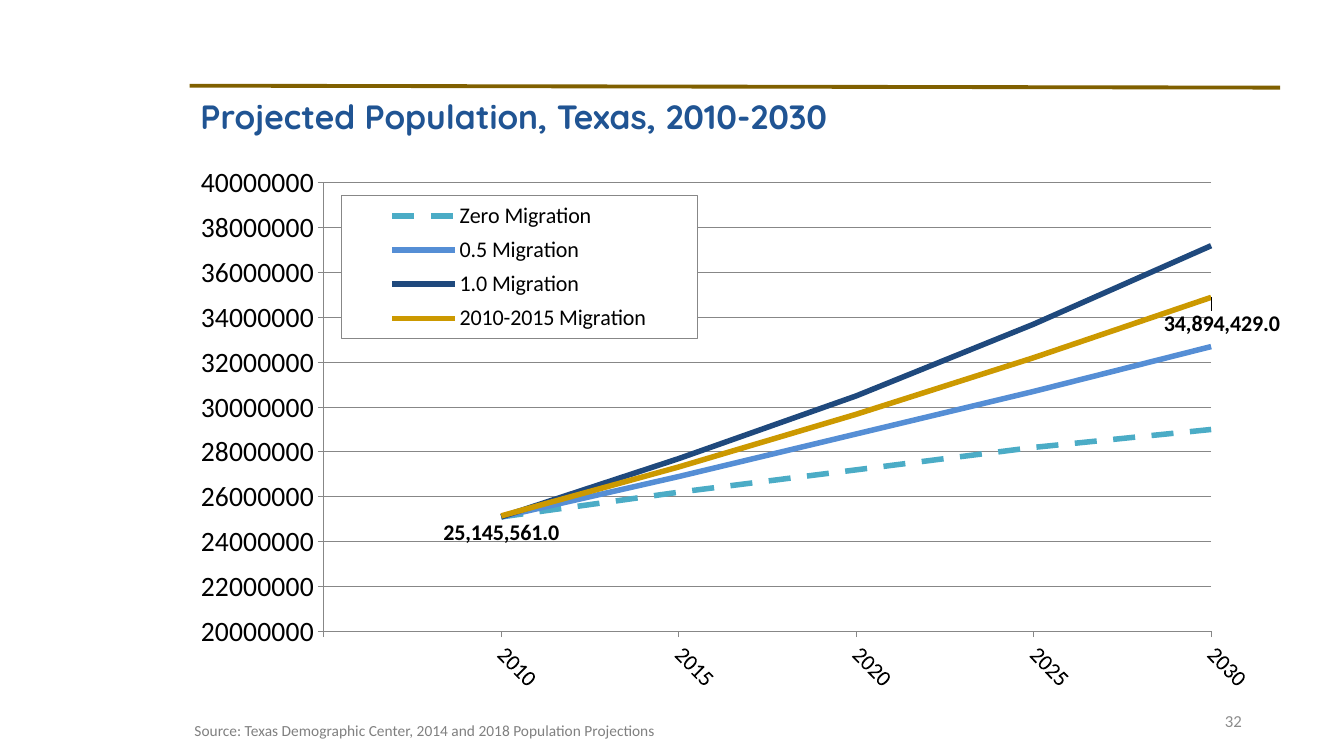
from lxml import etree
from pptx import Presentation
from pptx.chart.data import CategoryChartData
from pptx.dml.color import RGBColor
from pptx.enum import chart as ch, dml, shapes, text
from pptx.oxml import ns
from pptx.util import Pt

# Content
TITLE = "Projected Population, Texas, 2010-2030"
SOURCE = "Source: Texas Demographic Center, 2014 and 2018 Population Projections"
PAGE = "32"
YEARS = ["", "2010", "2015", "2020", "2025", "2030"]
SCENARIOS = [
    ("Zero Migration", "4BACC6", [None, 25100000, 26200000, 27200000, 28200000, 29000000]),
    ("0.5 Migration", "558ED5", [None, 25100000, 26900000, 28800000, 30700000, 32700000]),
    ("1.0 Migration", "1F497D", [None, 25100000, 27700000, 30500000, 33700000, 37200000]),
    ("2010-2015 Migration", "CC9900", [None, 25145561, 27326252, 29677772, 32204904, 34894429]),
]
DASHED = "Zero Migration"
LABELLED = "2010-2015 Migration"

# Theme and places (points; chart layouts are fractions of the chart)
THEME = dict(
    body="Calibri", heading="Quicksand", black="000000", white="FFFFFF",
    title="205493", rule="806000", page="8C8C8C", source="808080", axis="878787",
    title_size=24, chart_size=20, small_chart_size=16, page_size=12, source_size=11,
    line=4, rule_line=2.75, thin=0.75,
)
RULE = (135.4, 61.2, 914.4, 62.6)
TITLE_BOX = (136, 68.4, 779, 432)
PAGE_BOX = (678.2, 500.4, 216, 28.8)
SOURCE_BOX = (131.8, 511.2, 346.3, 20.9)
CHART_BOX = (131.8, 84.2, 783.4, 415.4)
PLOT_LAYOUT = (0.129, 0.112, 0.822, 0.771)
LEGEND_LAYOUT = (0.145, 0.134, 0.33, 0.246)
# Shift of each label from its place below the point, to keep clear of the lines
LABEL_SHIFTS = {1: (0, 0), 5: (0.01, 0.015)}


def rgb(name):
    return RGBColor.from_string(THEME.get(name, name))


def points(box):
    return [Pt(v) for v in box]


def set_font(font, size, color="black", face="body", bold=False):
    font.size, font.name, font.bold = Pt(THEME[size]), THEME[face], bold
    font.color.rgb = rgb(color)


def put_text(holder, words, size, color, face="body", bold=False,
             align=text.PP_ALIGN.LEFT, anchor=text.MSO_ANCHOR.TOP, wrap=True, spacing=1.0,
             fit=text.MSO_AUTO_SIZE.NONE):
    frame = holder.text_frame
    frame.word_wrap, frame.vertical_anchor, frame.auto_size = wrap, anchor, fit
    paragraph = frame.paragraphs[0]
    paragraph.alignment, paragraph.line_spacing = align, spacing
    paragraph.space_before = Pt(0)
    run = paragraph.add_run()
    run.text = words
    set_font(run.font, size, color, face, bold)


def make_layout(settings):
    layout = etree.Element(ns.qn("c:layout"))
    manual = etree.SubElement(layout, ns.qn("c:manualLayout"))
    for tag, value in settings:
        etree.SubElement(manual, ns.qn("c:" + tag)).set("val", str(value))
    return layout


def set_layout(parent, box, before, inner=False):
    for old in parent.findall(ns.qn("c:layout")):
        parent.remove(old)
    target = [("layoutTarget", "inner")] if inner else []
    edges = [("xMode", "edge"), ("yMode", "edge")]
    parent.find(ns.qn(before)).addprevious(make_layout([*target, *edges, *zip("xywh", box)]))


def style_line(line, color, width):
    line.color.rgb, line.width = rgb(color), Pt(THEME[width])


# Slide, rule and title
deck = Presentation()
deck.slide_width, deck.slide_height = Pt(960), Pt(540)
slide = deck.slides.add_slide(deck.slide_layouts[5])
title = slide.shapes.title
title.left, title.top, title.width, title.height = points(TITLE_BOX)
put_text(title, TITLE, "title_size", "title", face="heading", bold=True, spacing=0.9)

rule = slide.shapes.add_connector(shapes.MSO_CONNECTOR.STRAIGHT, *points(RULE))
style_line(rule.line, "rule", "rule_line")
etree.SubElement(rule._element.spPr, ns.qn("a:effectLst"))

# Page number and source
put_text(slide.shapes.add_textbox(*points(PAGE_BOX)), PAGE, "page_size", "page",
         align=text.PP_ALIGN.RIGHT, anchor=text.MSO_ANCHOR.MIDDLE)
put_text(slide.shapes.add_textbox(*points(SOURCE_BOX)), SOURCE, "source_size", "source",
         wrap=False, fit=text.MSO_AUTO_SIZE.SHAPE_TO_FIT_TEXT)

# Chart
data = CategoryChartData(number_format="0")
data.categories = YEARS
for name, _, values in SCENARIOS:
    data.add_series(name, values)
chart = slide.shapes.add_chart(ch.XL_CHART_TYPE.LINE, *points(CHART_BOX), data).chart
chart.has_title = False
set_font(chart.font, "chart_size")
plot = chart.plots[0]
plot.vary_by_categories = False
set_layout(chart._chartSpace.chart.plotArea, PLOT_LAYOUT, "c:lineChart", inner=True)

# Scenario lines
for series, (name, color, _) in zip(plot.series, SCENARIOS):
    series.smooth = False
    series.marker.style = ch.XL_MARKER_STYLE.NONE
    style_line(series.format.line, color, "line")
    if name == DASHED:
        series.format.line.dash_style = dml.MSO_LINE.DASH
    if name == LABELLED:
        series.data_labels.show_value = False
        for index in LABEL_SHIFTS:
            label = series.points[index].data_label
            set_font(label.font, "small_chart_size", bold=True)
            label.position = ch.XL_LABEL_POSITION.BELOW
        label_parts = series._element.findall(".//" + ns.qn("c:dLbl"))
        for part, shift in zip(label_parts, LABEL_SHIFTS.values()):
            number = etree.Element(ns.qn("c:numFmt"), formatCode="#,##0.0", sourceLinked="0")
            part.find(ns.qn("c:idx")).addnext(number)
            if any(shift):
                number.addprevious(make_layout(zip("xy", shift)))

# Axes: years slant, and the lines run from edge to edge
years, people = chart.category_axis, chart.value_axis
for axis, size in ((years, "small_chart_size"), (people, "chart_size")):
    set_font(axis.tick_labels.font, size)
    axis.major_tick_mark = ch.XL_TICK_MARK.OUTSIDE
    axis.minor_tick_mark = ch.XL_TICK_MARK.NONE
    style_line(axis.format.line, "axis", "thin")
years.has_major_gridlines = False
years._element.find(ns.qn("c:txPr")).find(ns.qn("a:bodyPr")).set("rot", "2700000")
people.minimum_scale, people.maximum_scale, people.major_unit = 20000000, 40000000, 2000000
people.has_major_gridlines = True
style_line(people.major_gridlines.format.line, "axis", "thin")
people.tick_labels.number_format = "0"
people.tick_labels.number_format_is_linked = False
cross = people._element.find(ns.qn("c:crossBetween"))
if cross is None:
    cross = etree.Element(ns.qn("c:crossBetween"))
    people._element.find(ns.qn("c:majorUnit")).addprevious(cross)
cross.set("val", "midCat")

# Legend
chart.has_legend = True
legend = chart.legend
legend.position = ch.XL_LEGEND_POSITION.LEFT
legend.include_in_layout = True
set_font(legend.font, "small_chart_size")
set_layout(legend._element, LEGEND_LAYOUT, "c:overlay")
frame = etree.Element(ns.qn("c:spPr"))
fill = etree.SubElement(frame, ns.qn("a:solidFill"))
etree.SubElement(fill, ns.qn("a:srgbClr"), val=THEME["white"])
border = etree.SubElement(frame, ns.qn("a:ln"), w=str(Pt(THEME["thin"])))
border_fill = etree.SubElement(border, ns.qn("a:solidFill"))
etree.SubElement(border_fill, ns.qn("a:srgbClr"), val=THEME["axis"])
legend._element.find(ns.qn("c:txPr")).addprevious(frame)

deck.save("out.pptx")
